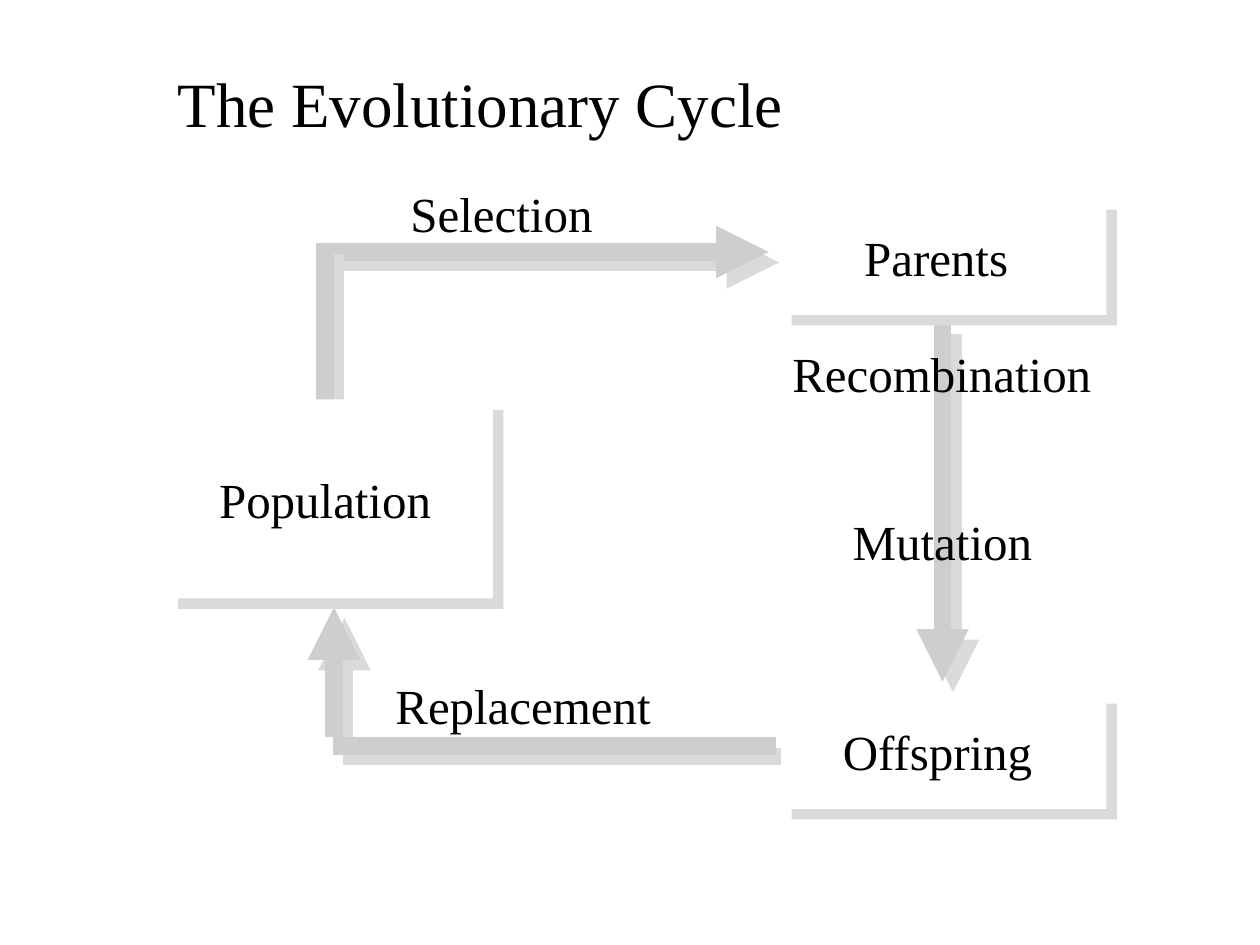
import pptx
import pptx.dml.color
import pptx.enum.shapes
import pptx.enum.text
import pptx.oxml
import pptx.oxml.ns
import pptx.util

Pt = pptx.util.Pt
BLACK = pptx.dml.color.RGBColor(0x00, 0x00, 0x00)
WHITE = pptx.dml.color.RGBColor(0xFF, 0xFF, 0xFF)
GREY = pptx.dml.color.RGBColor(0xCE, 0xCE, 0xCE)
SHADOW = pptx.dml.color.RGBColor(0xDA, 0xDA, 0xDA)

FONT = "Times New Roman"
LINE_WIDTH = 10

TITLE = ("The Evolutionary Cycle", (94.3, 16.6, 609.1, 84.2))

# Line: start x, start y, end x, end y, has an arrowhead
RECOMBINATION_ARROW = [(538.6, 185, 538.6, 389.5, True)]
SELECTION_ARROW = [(185.8, 144, 439.2, 144, True),
                   (185.8, 233.3, 185.8, 139, False)]
REPLACEMENT_ARROW = [(190.8, 421.2, 190.8, 347, True),
                     (190.1, 426.2, 443.5, 426.2, False)]

# Box: rectangle, label, label position; positions are left, top, width, height
BOXES = [
    ((95.8, 228.2, 185.8, 113.8), "Population", (118.1, 265, 135.4, 40.3)),
    ((446.4, 396, 185.8, 66.2), "Offspring", (474.5, 409, 123.1, 40.3)),
    ((446.4, 113.8, 185.8, 66.2), "Parents", (486.7, 126.7, 96.5, 40.3)),
]

STEPS = [
    ("Recombination", (445.7, 193, 185.8, 41.8)),
    ("Mutation", (480.2, 288.7, 118.1, 41.8)),
    ("Selection", (227.5, 101.5, 119.5, 41.8)),
    ("Replacement", (218.9, 382.3, 161.3, 41.8)),
]


def points(values):
    return [Pt(value) for value in values]


def add_shadow(shape):
    """Cast a hard shadow down and to the right."""
    shape._element.spPr.append(pptx.oxml.parse_xml(
        f'<a:effectLst {pptx.oxml.ns.nsdecls("a")}>'
        f'<a:outerShdw dist="{Pt(8.5)}" dir="2700000" algn="ctr" rotWithShape="0">'
        f'<a:srgbClr val="{SHADOW}"/></a:outerShdw></a:effectLst>'))


def write(frame, text, size, **frame_format):
    for name, value in frame_format.items():
        setattr(frame, name, value)
    paragraph = frame.paragraphs[0]
    paragraph.alignment = pptx.enum.text.PP_ALIGN.LEFT
    run = paragraph.add_run()
    run.text = text
    for name, value in {"name": FONT, "size": Pt(size)}.items():
        setattr(run.font, name, value)
    run.font.color.rgb = BLACK


def add_label(shapes, text, position):
    label = shapes.add_textbox(*points(position))
    write(label.text_frame, text, 28, word_wrap=False,
          auto_size=pptx.enum.text.MSO_AUTO_SIZE.SHAPE_TO_FIT_TEXT)


def add_line(shapes, *ends, arrow):
    line = shapes.add_connector(
        pptx.enum.shapes.MSO_CONNECTOR.STRAIGHT, *points(ends))
    line.line.color.rgb = GREY
    line.line.width = Pt(LINE_WIDTH)
    if arrow:
        line.line._get_or_add_ln().append(pptx.oxml.parse_xml(
            f'<a:tailEnd {pptx.oxml.ns.nsdecls("a")} type="triangle"/>'))
    add_shadow(line)


def add_box(shapes, position, text, label_position):
    box = shapes.add_shape(
        pptx.enum.shapes.MSO_SHAPE.RECTANGLE, *points(position))
    box.fill.solid()
    box.fill.fore_color.rgb = WHITE
    box.line.fill.background()
    add_shadow(box)
    add_label(shapes, text, label_position)


def main():
    presentation = pptx.Presentation()
    presentation.slide_width, presentation.slide_height = Pt(720), Pt(540)
    slide = presentation.slides.add_slide(presentation.slide_layouts[5])

    text, position = TITLE
    title = slide.shapes.title
    title.left, title.top, title.width, title.height = points(position)
    write(title.text_frame, text, 36, word_wrap=True,
          auto_size=pptx.enum.text.MSO_AUTO_SIZE.NONE,
          vertical_anchor=pptx.enum.text.MSO_ANCHOR.MIDDLE)

    for lines in (RECOMBINATION_ARROW, SELECTION_ARROW, REPLACEMENT_ARROW):
        shapes = slide.shapes
        if len(lines) > 1:
            shapes = shapes.add_group_shape().shapes
        for *ends, arrow in lines:
            add_line(shapes, *ends, arrow=arrow)
    for box in BOXES:
        add_box(slide.shapes.add_group_shape().shapes, *box)
    for step in STEPS:
        add_label(slide.shapes, *step)

    presentation.save("out.pptx")


if __name__ == "__main__":
    main()
